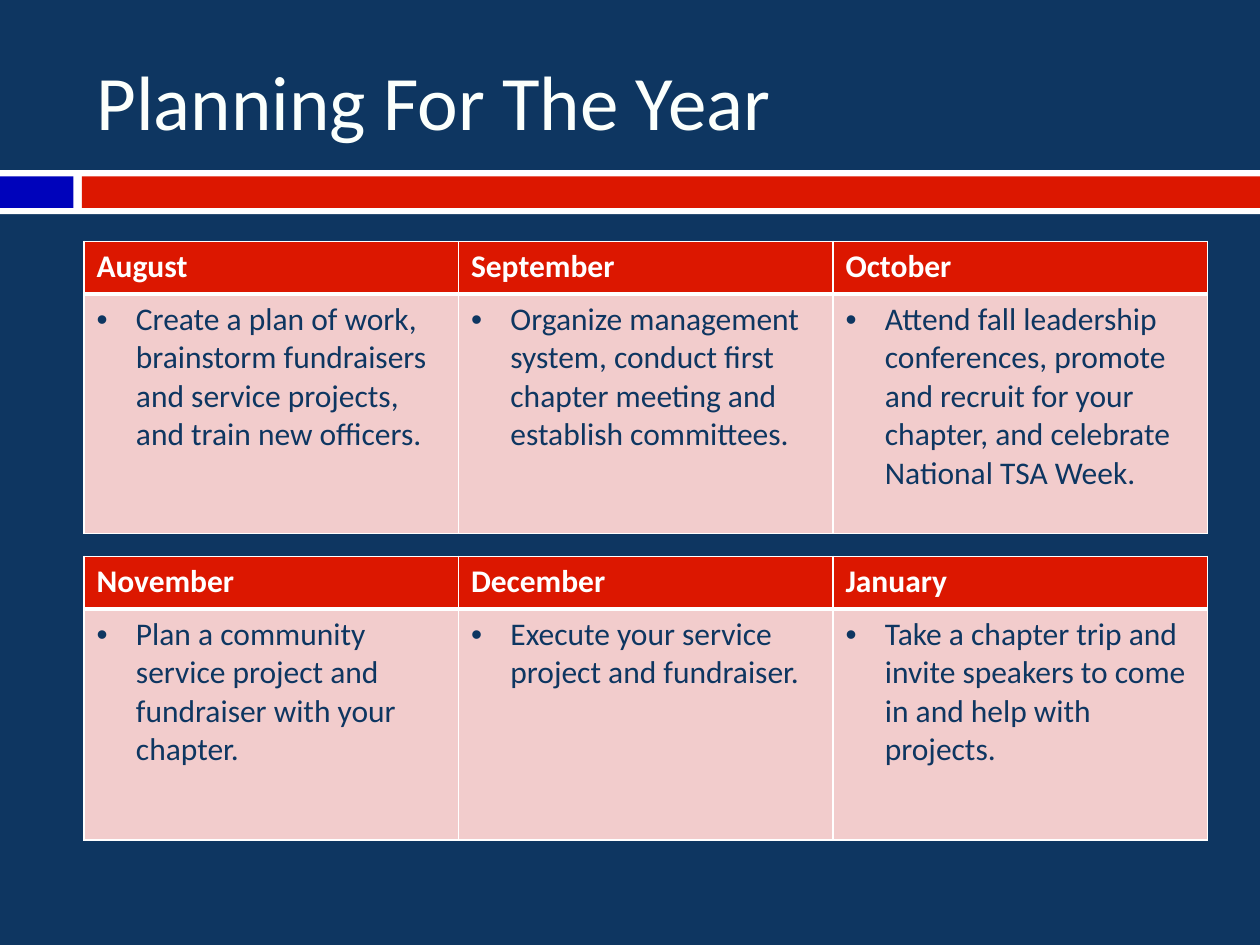
"""Build the yearly planning slide with two three-month tables."""
from lxml.etree import SubElement
from pptx import Presentation
from pptx.dml.color import RGBColor as Color
from pptx.enum.shapes import MSO_SHAPE as Shape
from pptx.enum.text import MSO_ANCHOR as Anchor, PP_ALIGN as Align
from pptx.oxml import parse_xml
from pptx.oxml.ns import nsdecls, qn
from pptx.util import Pt

TITLE = "Planning For The Year"
FONT = "Calibri"
COLORS = {"navy": "0E3661", "white": "FFFFFF", "title": "FBFFFC",
          "blue": "0003BB", "red": "DC1700", "pink": "F2CCCC"}
BANDS = [
    ("white", 0, 97.2, 720, 25.2),
    ("blue", 0, 100.8, 42, 18),
    ("red", 46.8, 100.8, 673.2, 18),
]
QUARTERS = [
    {"top": 138, "body_height": 137, "months": [
        ("August", "Create a plan of work, brainstorm fundraisers and service "
                   "projects, and train new officers."),
        ("September", "Organize management system, conduct first chapter "
                      "meeting and establish committees."),
        ("October", "Attend fall leadership conferences, promote and recruit "
                    "for your chapter, and celebrate National TSA Week."),
    ]},
    {"top": 318, "body_height": 132, "months": [
        ("November", "Plan a community service project and fundraiser with "
                     "your chapter."),
        ("December", "Execute your service project and fundraiser."),
        ("January", "Take a chapter trip and invite speakers to come in and "
                    "help with projects."),
    ]},
]
LEFT, WIDTH, HEADER_HEIGHT = 48, 642, 30
BULLET_INDENT = 22.5


def color(name):
    return Color.from_string(COLORS[name])


def add_run(paragraph, text, size, color_name, bold=False):
    run = paragraph.add_run()
    run.text = text
    run.font.name = FONT
    run.font.size = Pt(size)
    run.font.bold = bold
    run.font.color.rgb = color(color_name)


def add_bullet(paragraph):
    properties = paragraph._p.get_or_add_pPr()
    properties.set("marL", str(Pt(BULLET_INDENT)))
    properties.set("indent", str(-Pt(BULLET_INDENT)))
    SubElement(properties, qn("a:buFont")).set("typeface", "Arial")
    SubElement(properties, qn("a:buChar")).set("char", "•")


def set_borders(cell, top, bottom):
    properties = cell._tc.get_or_add_tcPr()
    widths = {"L": 1, "R": 1, "T": top, "B": bottom}
    for position, (side, width) in enumerate(widths.items()):
        properties.insert(position, parse_xml(
            f'<a:ln{side} {nsdecls("a")} w="{Pt(width)}"><a:solidFill>'
            f'<a:srgbClr val="{COLORS["white"]}"/></a:solidFill></a:ln{side}>'))


def fill_cell(cell, text, is_header):
    cell.fill.solid()
    cell.fill.fore_color.rgb = color("red" if is_header else "pink")
    set_borders(cell, *((1, 3) if is_header else (3, 1)))
    paragraph = cell.text_frame.paragraphs[0]
    if not is_header:
        add_bullet(paragraph)
    add_run(paragraph, text, 18, "white" if is_header else "navy", is_header)


def add_quarter(slide, top, body_height, months):
    table = slide.shapes.add_table(
        2, len(months), Pt(LEFT), Pt(top), Pt(WIDTH),
        Pt(HEADER_HEIGHT + body_height)).table
    table.rows[0].height = Pt(HEADER_HEIGHT)
    table.rows[1].height = Pt(body_height)
    for column, month in enumerate(months):
        table.columns[column].width = Pt(WIDTH / len(months))
        for row, text in enumerate(month):
            fill_cell(table.cell(row, column), text, row == 0)


def add_band(slide, color_name, *box):
    shape = slide.shapes.add_shape(Shape.RECTANGLE, *map(Pt, box))
    shape.shadow.inherit = False
    shape.fill.solid()
    shape.fill.fore_color.rgb = color(color_name)
    shape.line.fill.background()


def set_title(slide):
    title = slide.shapes.title
    title.left, title.top, title.width, title.height = map(
        Pt, (LEFT, 18, WIDTH, 78))
    title.text_frame.vertical_anchor = Anchor.MIDDLE
    paragraph = title.text_frame.paragraphs[0]
    paragraph.alignment = Align.LEFT
    add_run(paragraph, TITLE, 44, "title")


def main():
    presentation = Presentation()
    presentation.slide_width, presentation.slide_height = Pt(720), Pt(540)
    slide = presentation.slides.add_slide(presentation.slide_layouts[5])
    slide.background.fill.solid()
    slide.background.fill.fore_color.rgb = color("navy")
    for band in BANDS:
        add_band(slide, *band)
    set_title(slide)
    for quarter in QUARTERS:
        add_quarter(slide, **quarter)
    presentation.save("out.pptx")


if __name__ == "__main__":
    main()
